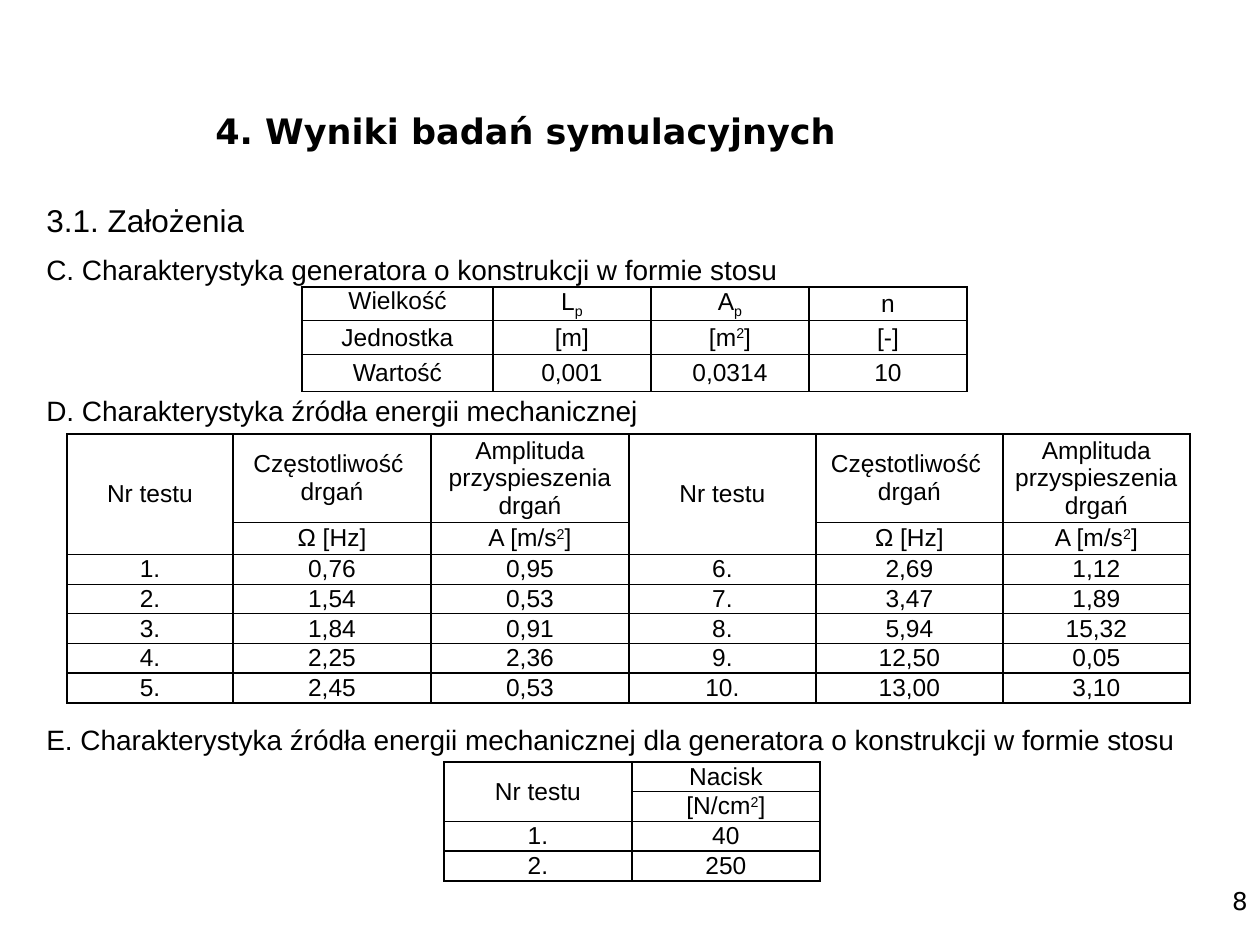
import dataclasses
import typing

import pptx
import pptx.dml.color
import pptx.enum.text
import pptx.oxml
import pptx.oxml.ns
import pptx.util

EMU = 914400 / 126  # one px
ALIGN = pptx.enum.text.PP_ALIGN
ANCHOR = pptx.enum.text.MSO_ANCHOR
SHIFT = {"^": "30000", "_": "-25000"}


@dataclasses.dataclass(frozen=True)
class Theme:
    ink: str = "000000"
    sans: str = "Arial"
    wide: str = "DejaVu Sans"
    title: int = 20
    head: int = 18
    label: int = 16
    body: int = 14
    line: int = 1


@dataclasses.dataclass(frozen=True)
class Label:
    text: str
    box: tuple[int, int, int, int]
    size: int
    face: str = Theme.sans
    bold: bool = False
    align: typing.Any = ALIGN.LEFT
    anchor: typing.Any = ANCHOR.TOP


@dataclasses.dataclass(frozen=True)
class Grid:
    """Table data; tall lists the columns whose first two cells are merged."""
    left: int
    top: int
    cols: tuple[int, ...]
    rows: tuple[int, ...]
    cells: list[list[str]]
    tall: tuple[int, ...] = ()
    high: tuple[tuple[int, int], ...] = ()  # cells with text at the top


THEME = Theme()
LEFT, WIDE = 34, 1191

LABELS = [
    Label("4. Wyniki badań symulacyjnych", (203, 66, 994, 130), THEME.title,
          THEME.wide, True, anchor=ANCHOR.MIDDLE),
    Label("3.1. Założenia", (LEFT, 195, WIDE, 50), THEME.head),
    Label("C. Charakterystyka generatora o konstrukcji w formie stosu",
          (LEFT, 246, WIDE, 47), THEME.label),
    Label("D. Charakterystyka źródła energii mechanicznej",
          (LEFT, 387, WIDE, 47), THEME.label),
    Label("E. Charakterystyka źródła energii mechanicznej dla generatora "
          "o konstrukcji w formie stosu", (LEFT, 716, WIDE, 47), THEME.label),
    Label("8", (966, 880, 294, 65), THEME.body, THEME.wide, align=ALIGN.RIGHT),
]

HEAD = ["Nr testu", "Częstotliwość \ndrgań", "Amplituda\nprzyspieszenia drgań"]
UNITS = ["", "Ω [Hz]", "A [m/s^2]"]

GRIDS = [
    Grid(302, 287, (191, 158, 158, 158), (33, 34, 37), [
        ["Wielkość", "L_p", "A_p", "n"],
        ["Jednostka", "[m]", "[m^2]", "[-]"],
        ["Wartość", "0,001", "0,0314", "10"],
    ], high=((0, 0),)),
    Grid(67, 434, (166, 198, 198, 187, 187, 187),
         (88, 32, 30, 29, 30, 29, 30), [
        HEAD * 2,
        UNITS * 2,
        ["1.", "0,76", "0,95", "6.", "2,69", "1,12"],
        ["2.", "1,54", "0,53", "7.", "3,47", "1,89"],
        ["3.", "1,84", "0,91", "8.", "5,94", "15,32"],
        ["4.", "2,25", "2,36", "9.", "12,50", "0,05"],
        ["5.", "2,45", "0,53", "10.", "13,00", "3,10"],
    ], tall=(0, 3)),
    Grid(444, 762, (188, 188), (29, 30, 29, 30), [
        ["Nr testu", "Nacisk"],
        ["", "[N/cm^2]"],
        ["1.", "40"],
        ["2.", "250"],
    ], tall=(0,)),
]


def px(num: int) -> int:
    return round(num * EMU)


def put(item: typing.Any, form: dict[str, typing.Any]) -> None:
    for name, value in form.items():
        setattr(item, name, value)


def split(text: str) -> list[tuple[str, str]]:
    """Cut text into (shift, part) pairs; a mark shifts one character."""
    parts, mark = [("", "")], ""
    for char in text:
        if char in SHIFT:
            mark = char
        elif parts[-1][0] == mark:
            parts[-1] = (mark, parts[-1][1] + char)
            mark = ""
        else:
            parts.append((mark, char))
            mark = ""
    return [part for part in parts if part[1]]


def write(frame: typing.Any, text: str, size: int, face: str,
          bold: bool, align: typing.Any) -> None:
    for i, line in enumerate(text.split("\n")):
        para = frame.add_paragraph() if i else frame.paragraphs[0]
        para.alignment = align
        form = {"size": pptx.util.Pt(size), "name": face, "bold": bold}
        put(para.font, form)
        for mark, part in split(line):
            run = para.add_run()
            run.text = part
            put(run.font, form)
            run.font.color.rgb = pptx.dml.color.RGBColor.from_string(THEME.ink)
            if mark:
                run._r.get_or_add_rPr().set("baseline", SHIFT[mark])


def edge(cell: typing.Any) -> None:
    """Draw a solid line on all four sides of a cell."""
    props = cell._tc.get_or_add_tcPr()
    space = pptx.oxml.ns.nsdecls("a")
    width = pptx.util.Pt(THEME.line)
    for side in "LRTB":
        props.append(pptx.oxml.parse_xml(
            f'<a:ln{side} {space} w="{width}"><a:solidFill>'
            f'<a:srgbClr val="{THEME.ink}"/></a:solidFill></a:ln{side}>'))


def draw_label(slide: typing.Any, label: Label) -> None:
    box = slide.shapes.add_textbox(*map(px, label.box))
    put(box.text_frame, {"word_wrap": True, "vertical_anchor": label.anchor})
    write(box.text_frame, label.text, label.size, label.face, label.bold,
          label.align)


def draw_grid(slide: typing.Any, grid: Grid) -> None:
    area = (grid.left, grid.top, sum(grid.cols), sum(grid.rows))
    table = slide.shapes.add_table(len(grid.rows), len(grid.cols),
                                   *map(px, area)).table
    put(table, {"first_row": False, "horz_banding": False})
    for col, width in zip(table.columns, grid.cols):
        col.width = px(width)
    for row, height in zip(table.rows, grid.rows):
        row.height = px(height)
    for i, line in enumerate(grid.cells):
        for j, text in enumerate(line):
            cell = table.cell(i, j)
            anchor = ANCHOR.TOP if (i, j) in grid.high else ANCHOR.MIDDLE
            put(cell, {"margin_left": 0, "margin_right": 0, "margin_top": 0,
                       "margin_bottom": 0, "vertical_anchor": anchor})
            edge(cell)
            cell.fill.background()
            write(cell.text_frame, text, THEME.body, THEME.sans, False,
                  ALIGN.CENTER)
    for j in grid.tall:
        table.cell(0, j).merge(table.cell(1, j))


def main() -> None:
    deck = pptx.Presentation()
    put(deck, {"slide_width": px(1260), "slide_height": px(945)})
    slide = deck.slides.add_slide(deck.slide_layouts[6])
    for label in LABELS:
        draw_label(slide, label)
    for grid in GRIDS:
        draw_grid(slide, grid)
    deck.save("out.pptx")


if __name__ == "__main__":
    main()
